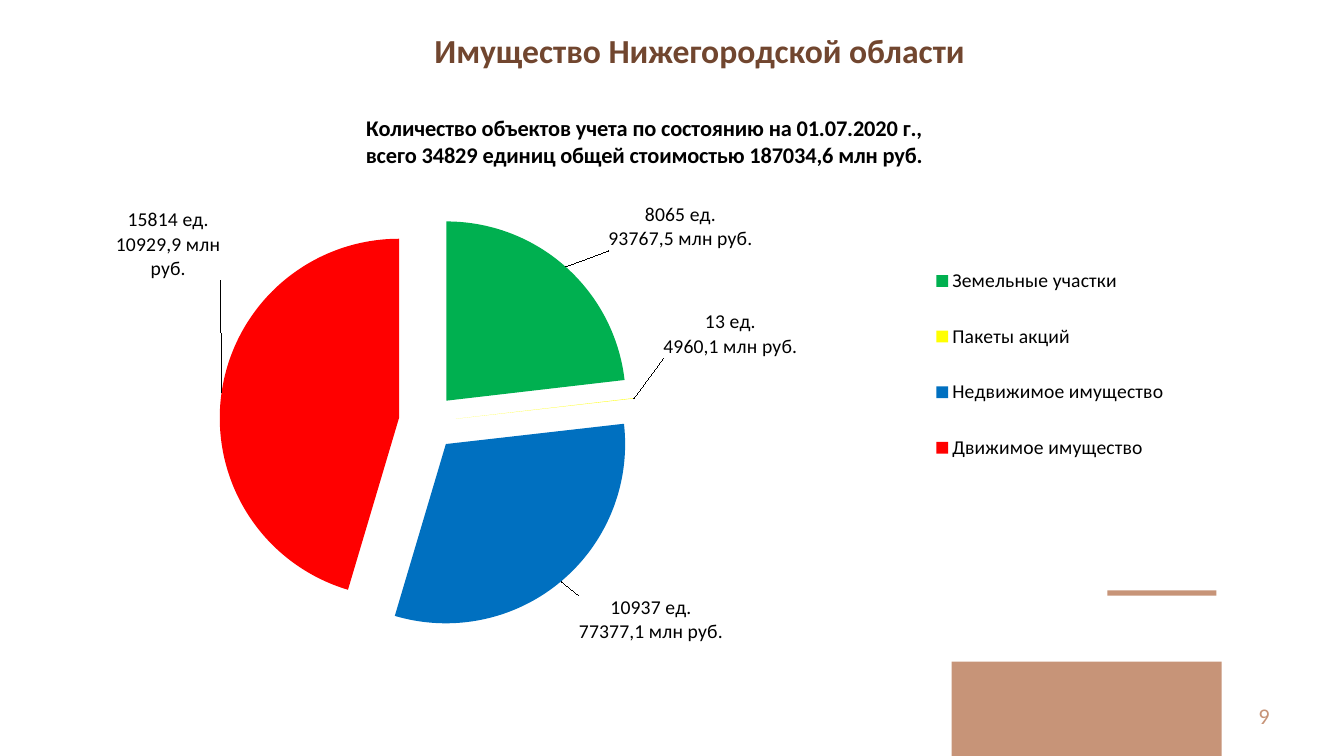
from lxml import etree
from pptx import Presentation
from pptx import util as u
from pptx.chart.data import CategoryChartData
from pptx.dml.color import RGBColor
from pptx.enum import chart as charts, shapes, text
from pptx.oxml import parse_xml
from pptx.oxml.ns import nsdecls, qn

WIDTH, HEIGHT = u.Inches(13.33), u.Inches(7.5)
FONT = "Calibri"
COLORS = {
    "accent": "C79478", "title": "71462F", "text": "000000",
    "land": "00B050", "stakes": "FFFF00", "realty": "0070C0", "movable": "FF0000",
}
ASSETS = [
    ("Земельные участки", 8065, "land", "8065 ед.\n93767,5 млн руб.", (0.033, -0.02)),
    ("Пакеты акций", 13, "stakes", "13 ед.\n4960,1 млн руб.", (0.02, -0.068)),
    ("Недвижимое имущество", 10937, "realty", "10937 ед.\n77377,1 млн руб.", (0.012, 0.017)),
    ("Движимое имущество", 15814, "movable", "15814 ед.\n10929,9 млн руб.", (0.004, -0.192)),
]
CHART_TITLE = ("Количество объектов учета по состоянию на 01.07.2020 г.,\n"
               "всего 34829 единиц общей стоимостью 187034,6 млн руб.")


def share(left, top, width, height):
    return (round(WIDTH * left), round(HEIGHT * top),
            round(WIDTH * width), round(HEIGHT * height))


def style(font, size, color, bold=False):
    font.name, font.size, font.bold = FONT, u.Pt(size), bold
    font.color.rgb = RGBColor.from_string(COLORS[color])


def layout(x, y, width=None, height=None, edge=False, inner=False):
    element = etree.Element(qn("c:layout"))
    manual = etree.SubElement(element, qn("c:manualLayout"))
    settings = [("layoutTarget", "inner" if inner else None),
                ("xMode", "edge" if edge else None),
                ("yMode", "edge" if edge else None),
                ("x", x), ("y", y), ("w", width), ("h", height)]
    for name, value in settings:
        if value is not None:
            etree.SubElement(manual, qn(f"c:{name}")).set("val", str(value))
    return element


def place(parent, after, element):
    for old in parent.findall(qn("c:layout")):
        parent.remove(old)
    if after is None:
        parent.insert(0, element)
    else:
        parent.find(qn(after)).addnext(element)


def add_block(page, box):
    block = page.shapes.add_shape(shapes.MSO_SHAPE.RECTANGLE, *box)
    block.shadow.inherit = False
    block.fill.solid()
    block.fill.fore_color.rgb = RGBColor.from_string(COLORS["accent"])
    block.line.fill.background()


def add_title(page, box):
    title = page.shapes.title
    title.left, title.top, title.width, title.height = box
    frame = title.text_frame
    frame.text = "Имущество Нижегородской области"
    frame.vertical_anchor = text.MSO_ANCHOR.MIDDLE
    para = frame.paragraphs[0]
    para.alignment = text.PP_ALIGN.CENTER
    para.line_spacing = 0.9
    style(para.font, 24, "title", True)


def add_page_number(page, box):
    frame = page.shapes.add_textbox(*box).text_frame
    frame.word_wrap = True
    frame.vertical_anchor = text.MSO_ANCHOR.MIDDLE
    para = frame.paragraphs[0]
    para.text = "9"
    para.alignment = text.PP_ALIGN.RIGHT
    style(para.font, 16, "accent")


def style_slices(series):
    series._element.find(qn("c:tx")).addnext(
        parse_xml(f'<c:explosion {nsdecls("c")} val="16"/>'))
    labels = series.data_labels
    labels.show_value = True
    labels.position = charts.XL_LABEL_POSITION.OUTSIDE_END
    style(labels.font, 14, "text", True)
    for index, (_, _, color, caption, _) in enumerate(ASSETS):
        point = series.points[index]
        point.format.fill.solid()
        point.format.fill.fore_color.rgb = RGBColor.from_string(COLORS[color])
        frame = point.data_label.text_frame
        frame.text = caption
        for para in frame.paragraphs:
            style(para.font, 14, "text", True)
        point.data_label.position = charts.XL_LABEL_POSITION.OUTSIDE_END
    for label, asset in zip(series._element.xpath(".//c:dLbl"), ASSETS):
        place(label, "c:idx", layout(*asset[-1]))


def add_asset_chart(page, box):
    data = CategoryChartData()
    data.categories = [asset[0] for asset in ASSETS]
    data.add_series("Series 1", [asset[1] for asset in ASSETS])
    chart = page.shapes.add_chart(charts.XL_CHART_TYPE.PIE, *box, data).chart
    style(chart.font, 18, "text")
    chart.has_title = True
    frame = chart.chart_title.text_frame
    frame.text = CHART_TITLE
    for para in frame.paragraphs:
        style(para.font, 16, "text", True)
    place(chart.chart_title._element, "c:tx", layout(0.27, 0.03, edge=True))
    chart.has_legend = True
    chart.legend.position = charts.XL_LEGEND_POSITION.RIGHT
    chart.legend.include_in_layout = False
    style(chart.legend.font, 14, "text")
    place(chart.legend._element, "c:legendPos", layout(0.75, 0.25, 0.21, 0.44, edge=True))
    plot = chart.plots[0]
    plot.vary_by_categories = True
    place(plot._element.getparent(), None,
          layout(0.02, 0.21, 0.61, 0.72, edge=True, inner=True))
    style_slices(plot.series[0])


def main():
    deck = Presentation()
    deck.slide_width, deck.slide_height = WIDTH, HEIGHT
    page = deck.slides.add_slide(deck.slide_layouts.get_by_name("Title Only"))
    add_block(page, share(0.708, 0.875, 0.201, 0.125))
    add_block(page, share(0.824, 0.781, 0.081, 0.007))
    add_title(page, share(0.089, 0.025, 0.863, 0.09))
    add_page_number(page, share(0.727, 0.92, 0.225, 0.053))
    add_asset_chart(page, share(0.034, 0.123, 0.874, 0.764))
    deck.save("out.pptx")


if __name__ == "__main__":
    main()
